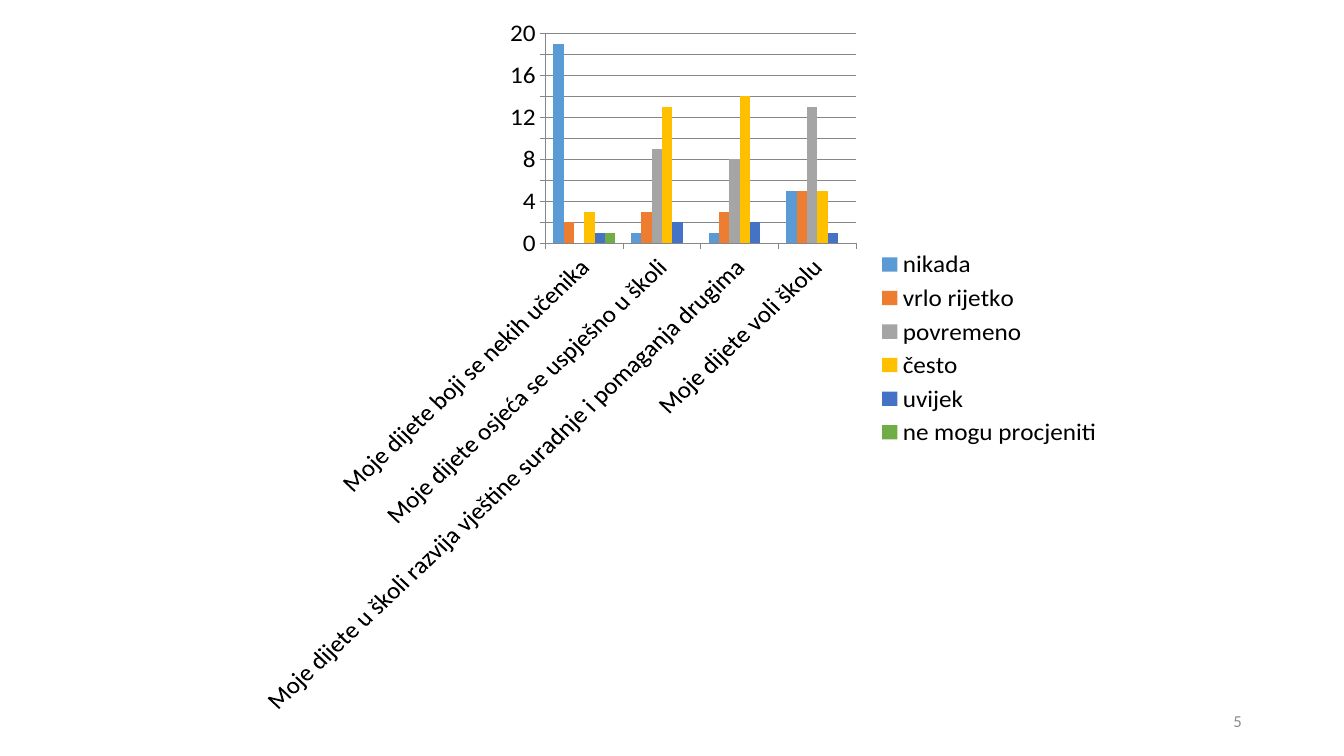
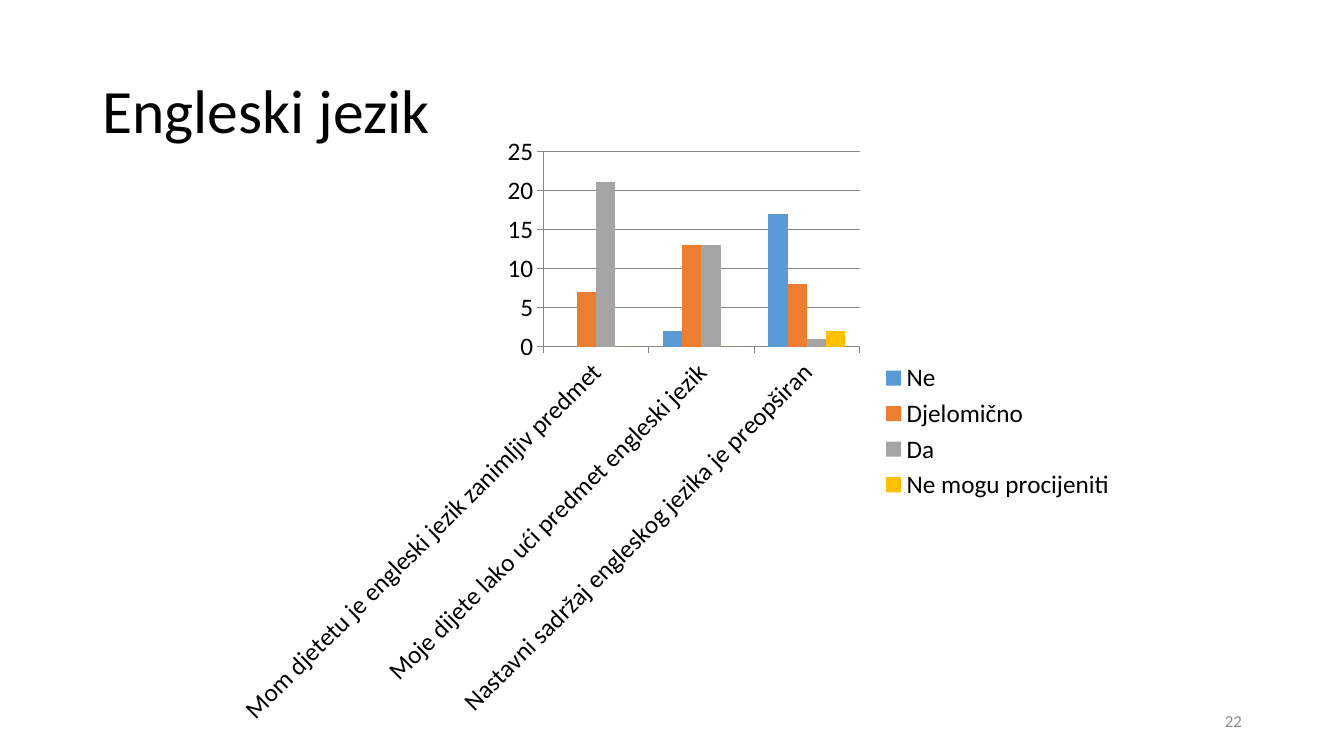
"""Build two survey slides, each with a clustered column chart."""
import pptx
import pptx.chart.data
import pptx.dml.color
import pptx.enum.chart
import pptx.enum.text
import pptx.util

Inches = pptx.util.Inches
Pt = pptx.util.Pt
Align = pptx.enum.text.PP_ALIGN

THEME = {
    "font": "Calibri",
    "ink": "000000",
    "muted": "8C8C8C",
    "rule": "868686",
    "bars": ["5B9BD5", "ED7D31", "A5A5A5", "FFC000", "4472C4", "70AD47"],
    "title": 44,
    "chart": 18,
    "foot": 12,
}

HIGH = 7.5
WIDE = HIGH * 16 / 9
SPAN = 9

SLIDES = [
    {
        "title": None,
        "page": "5",
        "box": (2.22, 0.19, 8.82, 6.9),
        "cats": [
            "Moje dijete boji se nekih učenika",
            "Moje dijete osjeća se uspješno u školi",
            "Moje dijete u školi razvija vještine suradnje i pomaganja drugima",
            "Moje dijete voli školu",
        ],
        "series": [
            ("nikada", (19, 1, 1, 5)),
            ("vrlo rijetko", (2, 3, 3, 5)),
            ("povremeno", (0, 9, 8, 13)),
            ("često", (3, 13, 14, 5)),
            ("uvijek", (1, 2, 2, 1)),
            ("ne mogu procjeniti", (1, 0, 0, 0)),
        ],
    },
    {
        "title": "Engleski jezik",
        "page": "22",
        "box": ((WIDE - SPAN) / 2, 1.25, SPAN, 6.06),
        "cats": [
            "Mom djetetu je engleski jezik zanimljiv predmet",
            "Moje dijete lako ući predmet engleski jezik",
            "Nastavni sadržaj engleskog jezika je preopširan",
        ],
        "series": [
            ("Ne", (0, 2, 17)),
            ("Djelomično", (7, 13, 8)),
            ("Da", (21, 13, 1)),
            ("Ne mogu procijeniti", (0, 0, 2)),
        ],
    },
]

TITLE_BOX = ((WIDE - 11.5) / 2, 0.4, 11.5, 1.45)
PAGE_BOX = (9.42, 6.95, 3, 0.4)


def color(name):
    return pptx.dml.color.RGBColor.from_string(THEME.get(name, name))


def place(box):
    return [Inches(side) for side in box]


def style(font, size, ink):
    font.name = THEME["font"]
    font.size = Pt(THEME[size])
    font.color.rgb = color(ink)


def add_text(slide, text, box, size, ink, align):
    frame = slide.shapes.add_textbox(*place(box)).text_frame
    frame.word_wrap = True
    frame.vertical_anchor = pptx.enum.text.MSO_ANCHOR.MIDDLE
    para = frame.paragraphs[0]
    para.text = text
    para.alignment = align
    para.line_spacing = 0.9 if size == "title" else 1.0
    style(para.font, size, ink)


def add_chart(slide, page):
    data = pptx.chart.data.CategoryChartData()
    data.categories = page["cats"]
    for name, values in page["series"]:
        data.add_series(name, values)
    kind = pptx.enum.chart.XL_CHART_TYPE.COLUMN_CLUSTERED
    chart = slide.shapes.add_chart(kind, *place(page["box"]), data).chart
    style(chart.font, "chart", "ink")
    chart.has_title = False
    chart.has_legend = True
    chart.legend.position = pptx.enum.chart.XL_LEGEND_POSITION.RIGHT
    chart.legend.include_in_layout = False
    plot = chart.plots[0]
    plot.gap_width = 150
    plot.overlap = 0
    plot.vary_by_categories = False
    for series, tint in zip(plot.series, THEME["bars"]):
        series.format.fill.solid()
        series.format.fill.fore_color.rgb = color(tint)
    value = chart.value_axis
    value.has_major_gridlines = True
    for part in (chart.category_axis, value, value.major_gridlines):
        part.format.line.color.rgb = color("rule")
        part.format.line.width = Pt(0.75)
    for axis in (chart.category_axis, value):
        axis.major_tick_mark = pptx.enum.chart.XL_TICK_MARK.OUTSIDE
        axis.minor_tick_mark = pptx.enum.chart.XL_TICK_MARK.NONE


def main():
    deck = pptx.Presentation()
    deck.slide_width = Inches(WIDE)
    deck.slide_height = Inches(HIGH)
    for page in SLIDES:
        slide = deck.slides.add_slide(deck.slide_layouts[6])
        if page["title"]:
            add_text(slide, page["title"], TITLE_BOX, "title", "ink", Align.LEFT)
        add_chart(slide, page)
        add_text(slide, page["page"], PAGE_BOX, "foot", "muted", Align.RIGHT)
    deck.save("out.pptx")


if __name__ == "__main__":
    main()
